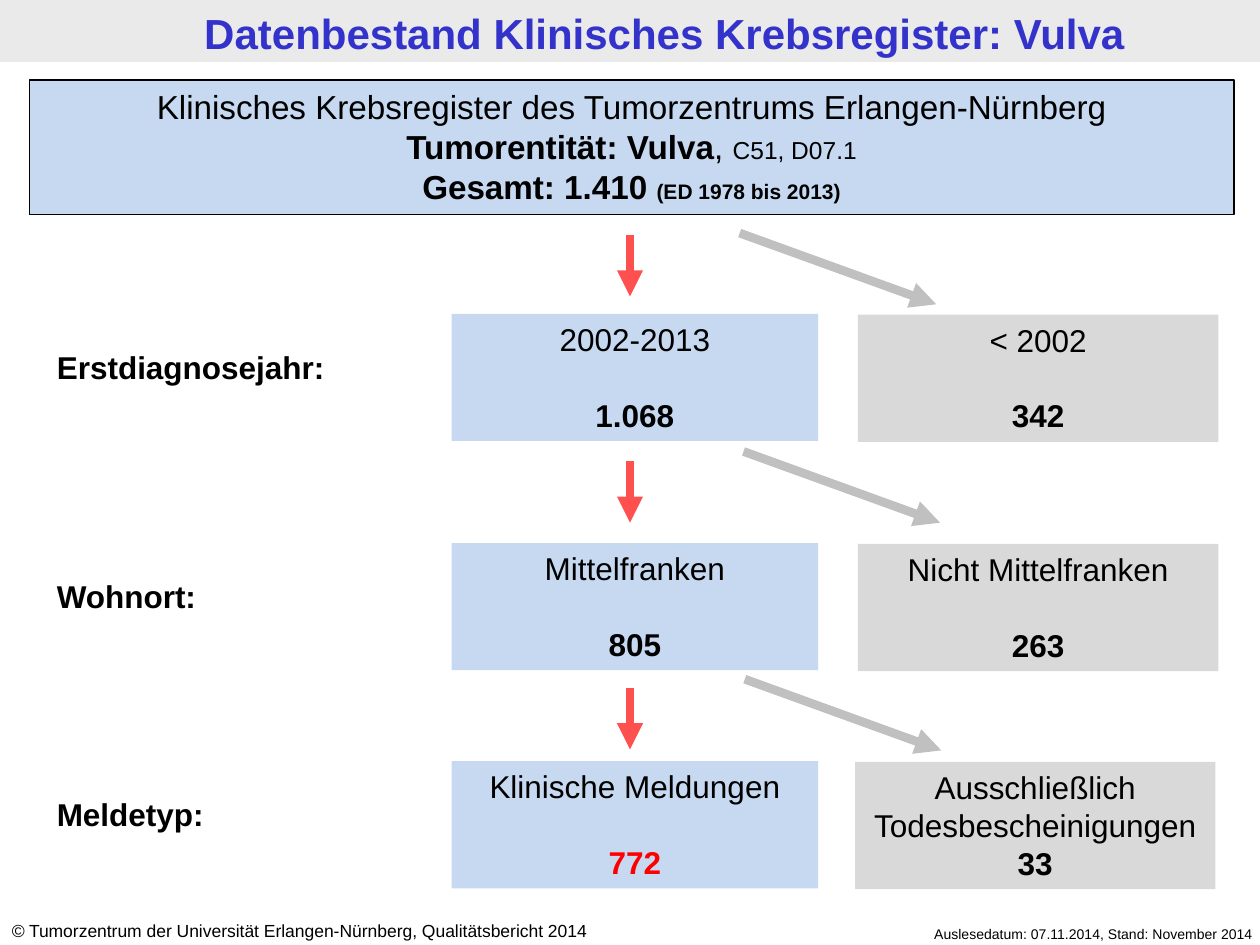
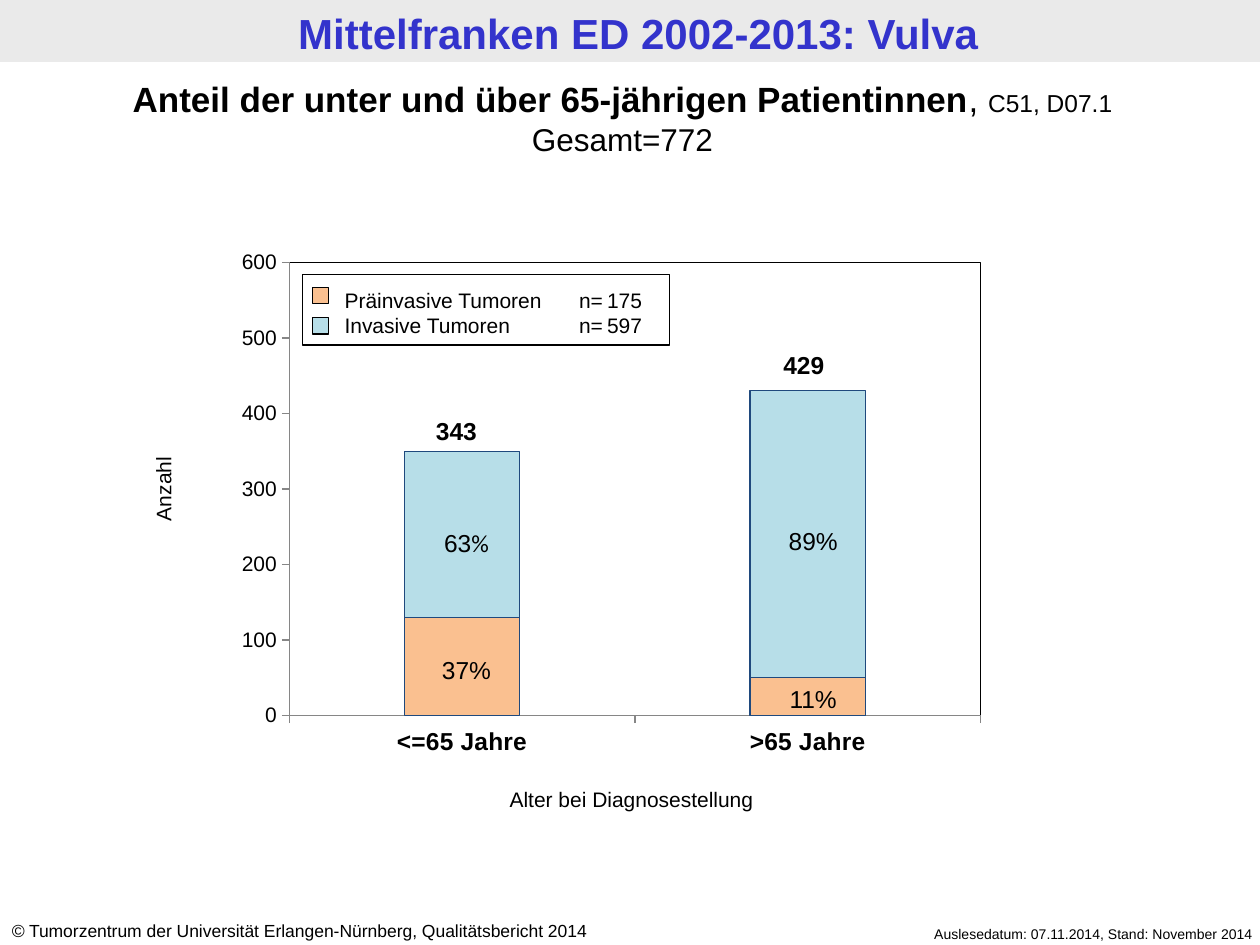
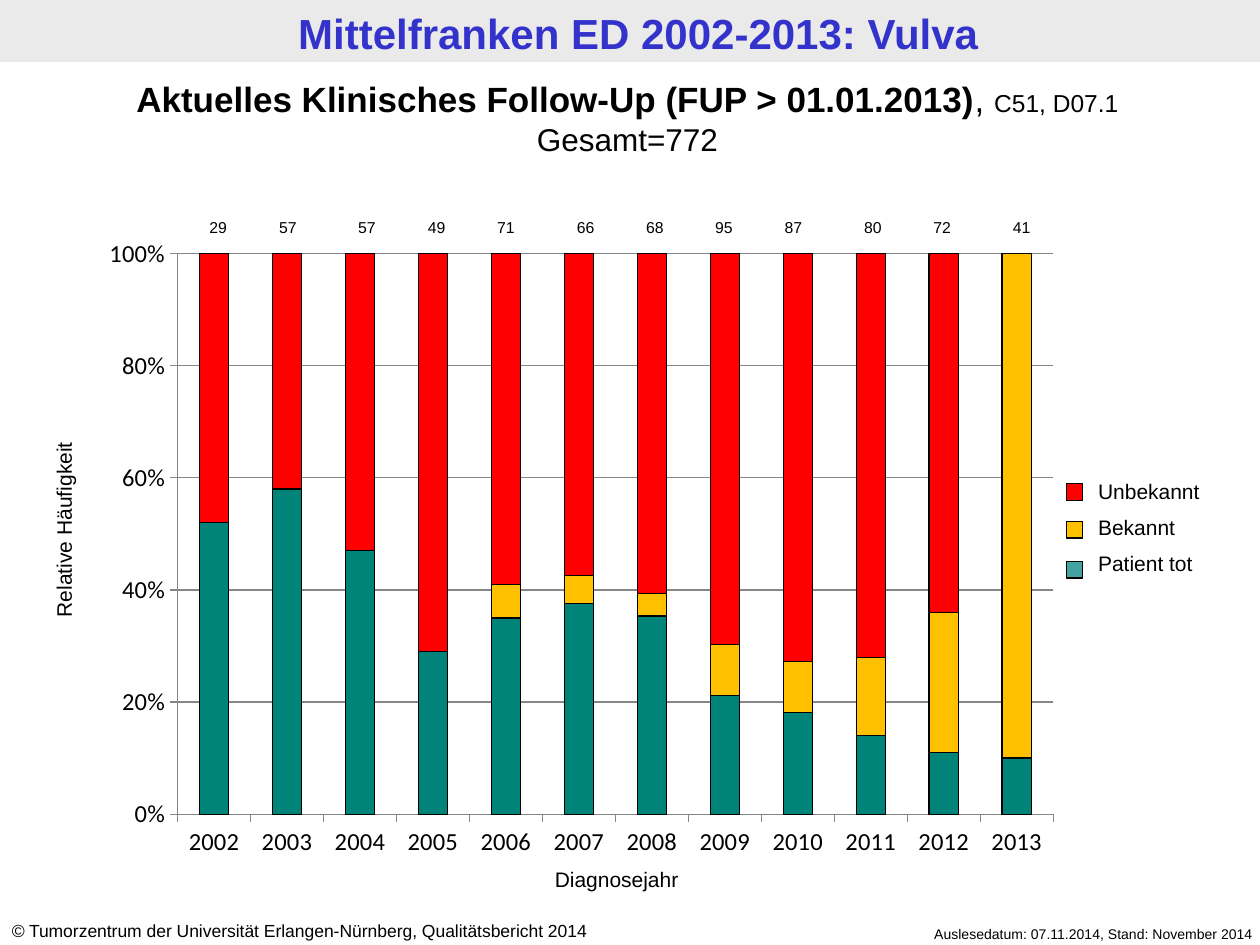
"""Build three slides on the vulva data of a clinical cancer registry."""
from lxml import etree
from pptx import Presentation
from pptx import util as u
from pptx.chart import data as chart_data
from pptx.dml.color import RGBColor
from pptx.enum import chart as chart_enum, shapes, text
from pptx.oxml import ns, parse_xml

Pt = u.Pt
BLACK = RGBColor(0, 0, 0)
BAND = RGBColor(0xEA, 0xEA, 0xEA)
TITLE = RGBColor(0x33, 0x33, 0xCC)
BLUE = RGBColor(0xC6, 0xD9, 0xF1)
GREY = RGBColor(0xD9, 0xD9, 0xD9)
RED = RGBColor(0xFF, 0, 0)
RED_ARROW = RGBColor(0xFF, 0x50, 0x50)
GREY_ARROW = RGBColor(0xC0, 0xC0, 0xC0)
AXIS = RGBColor(0x86, 0x86, 0x86)
NAVY = RGBColor(0x1F, 0x49, 0x7D)
ORANGE = RGBColor(0xFA, 0xC0, 0x90)
AQUA = RGBColor(0xB7, 0xDE, 0xE8)
TEAL = RGBColor(0, 0x83, 0x78)
TEAL_KEY = RGBColor(0, 0x83, 0x80)
AMBER = RGBColor(0xFF, 0xC0, 0)
LEFT, CENTER, RIGHT = text.PP_ALIGN.LEFT, text.PP_ALIGN.CENTER, text.PP_ALIGN.RIGHT

COPYRIGHT = [("©", {"italic": True}),
             " Tumorzentrum der Universität Erlangen-Nürnberg, Qualitätsbericht 2014"]
STAND = "Auslesedatum: 07.11.2014, Stand: November 2014"
CODES = ("C51, D07.1", {"size": 14})
COHORT_TITLE = "Mittelfranken ED 2002-2013: Vulva"

REGISTRY = ["Klinisches Krebsregister des Tumorzentrums Erlangen-Nürnberg",
            [("Tumorentität: Vulva", {"bold": True}), ", ", CODES],
            [("Gesamt: 1.410 ", {"bold": True}),
             ("(ED 1978 bis 2013)", {"size": 12, "bold": True})]]
STEPS = [
    {"label": "Erstdiagnosejahr:", "top": 179.3, "kept": ("2002-2013", "1.068", BLACK),
     "dropped": ("< 2002", "342", 21.6), "dropped_left": 490.3,
     "red_top": 134.4, "grey_start": (422.7, 133.2)},
    {"label": "Wohnort:", "top": 310.3, "kept": ("Mittelfranken", "805", BLACK),
     "dropped": ("Nicht Mittelfranken", "263", 21.6), "dropped_left": 490.3,
     "red_top": 263.7, "grey_start": (424.9, 258)},
    {"label": "Meldetyp:", "top": 434.9, "kept": ("Klinische Meldungen", "772", RED),
     "dropped": ("Ausschließlich Todesbescheinigungen", "33", 0), "dropped_left": 488.6,
     "red_top": 393.2, "grey_start": (425.6, 388.1)},
]

AGE_GROUPS = ["<=65 Jahre", ">65 Jahre"]
AGE_SERIES = [("Präinvasive Tumoren", [130, 50], ORANGE),
              ("Invasive Tumoren", [220, 380], AQUA)]
AGE_CASES = [175, 597]
AGE_LABELS = [
    (["63", ("%", {"font": "Calibri"})], 229.9, 298.1, 73.4, False),
    ("37%", 229.9, 370.8, 73.4, False),
    ("89%", 421.9, 296.9, 85.7, False),
    ("11%", 428, 387.4, 73.4, False),
    ("343", 224.1, 234.4, 73.4, True),
    ("429", 422.6, 196.6, 73.4, True),
]

YEARS = [str(year) for year in range(2002, 2014)]
FOLLOW_UP = [
    ("Patient tot", [52, 58, 47, 29, 35, 38, 35, 21, 18, 14, 11, 10], TEAL),
    ("Bekannt", [0, 0, 0, 0, 6, 5, 4, 9, 9, 14, 25, 90], AMBER),
    ("Unbekannt", [48, 42, 53, 71, 59, 58, 60, 69, 72, 72, 64, 0], RED),
]
YEAR_TOTALS = [(29, 104.9), (57, 144.7), (57, 189.9), (49, 229.7), (71, 269.3), (66, 314.8),
               (68, 354.4), (95, 393.9), (87, 433.6), (80, 479), (72, 518.6), (41, 564)]
FOLLOW_UP_KEYS = [(RED, 276.5, None), (AMBER, 298.1, None), (TEAL_KEY, 320.9, 74)]


def add_box(page, area, fill=None, line=None, alpha=None):
    box = page.shapes.add_shape(shapes.MSO_SHAPE.RECTANGLE, *map(Pt, area))
    box.shadow.inherit = False
    if fill is None:
        box.fill.background()
    else:
        box.fill.solid()
        box.fill.fore_color.rgb = fill
    if alpha:
        color = box.element.spPr.find(".//" + ns.qn("a:srgbClr"))
        etree.SubElement(color, ns.qn("a:alpha"), val=str(alpha * 1000))
    if line is None:
        box.line.fill.background()
    else:
        box.line.color.rgb = line
        box.line.width = Pt(0.75)
    return box


def put_text(page, paragraphs, area, *, size=18, bold=False, color=BLACK, align=LEFT,
             fill=None, line=None, gap=0, rotation=0, tabs=()):
    if fill is None:
        box = page.shapes.add_textbox(*map(Pt, area))
    else:
        box = add_box(page, area, fill, line)
    box.rotation = rotation
    frame = box.text_frame
    frame.word_wrap = True
    frame.vertical_anchor = text.MSO_ANCHOR.TOP
    for index, spans in enumerate(paragraphs):
        para = frame.add_paragraph() if index else frame.paragraphs[0]
        para.alignment = align
        if index and gap:
            para.space_before = Pt(gap)
        if tabs:
            stops = etree.SubElement(para._p.get_or_add_pPr(), ns.qn("a:tabLst"))
            for place, side in tabs:
                etree.SubElement(stops, ns.qn("a:tab"), pos=str(Pt(place)), algn=side)
        for span in [spans] if isinstance(spans, str) else spans:
            words, look = (span, {}) if isinstance(span, str) else span
            run = para.add_run()
            run.text = words
            run.font.name = look.get("font", "Arial")
            run.font.size = Pt(look.get("size", size))
            run.font.bold = look.get("bold", bold)
            run.font.italic = look.get("italic", False)
            run.font.color.rgb = look.get("color", color)
    return box


def add_arrow(page, start, end, color):
    arrow = page.shapes.add_connector(shapes.MSO_CONNECTOR.STRAIGHT, *map(Pt, start + end))
    arrow.line.color.rgb = color
    arrow.line.width = Pt(5)
    properties = arrow.element.spPr
    etree.SubElement(properties.find(ns.qn("a:ln")), ns.qn("a:tailEnd"), type="triangle")
    etree.SubElement(properties, ns.qn("a:effectLst"))


def add_page(deck, title, shift=0):
    page = deck.slides.add_slide(deck.slide_layouts[6])
    add_box(page, (0, 0, 720, 35.4), BAND)
    put_text(page, [title], (4.7 + shift, 0.5, 720, 35.3), size=24, bold=True,
             color=TITLE, align=CENTER)
    put_text(page, [STAND], (479.1, 525.2, 244, 17.3), size=8, align=RIGHT)
    put_text(page, [COPYRIGHT], (-0.4, 522.4, 377.3, 19.4), size=10)
    return page


def add_heading(page, topic, left, width):
    put_text(page, [[(topic, {"size": 20, "bold": True}), (", ", {"size": 20}), CODES],
                    "Gesamt=772"], (left, 41, width, 53.3), align=CENTER)


def add_columns(page, kind, area, categories, series, outline, gap, layout):
    values = chart_data.CategoryChartData()
    values.categories = categories
    for name, numbers, color in series:
        values.add_series(name, numbers)
    chart = page.shapes.add_chart(kind, *map(Pt, area), values).chart
    chart.has_legend = chart.has_title = False
    chart.font.name, chart.font.size = "Calibri", Pt(14)
    chart.font.color.rgb = BLACK
    plot = chart.plots[0]
    plot.gap_width, plot.overlap, plot.vary_by_categories = gap, 100, False
    for column, (name, numbers, color) in zip(plot.series, series):
        column.format.fill.solid()
        column.format.fill.fore_color.rgb = color
        column.format.line.color.rgb = outline
        column.format.line.width = Pt(0.75)
    for axis in (chart.category_axis, chart.value_axis):
        axis.major_tick_mark = chart_enum.XL_TICK_MARK.OUTSIDE
        axis.minor_tick_mark = chart_enum.XL_TICK_MARK.NONE
        axis.format.line.color.rgb = AXIS
        axis.format.line.width = Pt(0.75)
    chart.value_axis.minimum_scale = 0
    plot_area = chart.element.find(".//" + ns.qn("c:plotArea"))
    for old in plot_area.findall(ns.qn("c:layout")):
        plot_area.remove(old)
    sizes = "".join(f'<c:{tag} val="{share}"/>' for tag, share in zip("xywh", layout))
    plot_area.insert(0, parse_xml(
        f'<c:layout {ns.nsdecls("c")}><c:manualLayout><c:layoutTarget val="inner"/>'
        f'<c:xMode val="edge"/><c:yMode val="edge"/>{sizes}</c:manualLayout></c:layout>'))
    return chart


def build_flow(deck):
    page = add_page(deck, "Datenbestand Klinisches Krebsregister: Vulva", 15)
    put_text(page, REGISTRY, (16.8, 45.7, 688.3, 77), size=19, align=CENTER,
             fill=BLUE, line=BLACK)
    for step in STEPS:
        top = step["top"]
        put_text(page, [step["label"]], (25.4, top + 16, 198.7, 28.8), bold=True)
        name, count, color = step["kept"]
        put_text(page, [name, [(count, {"bold": True, "color": color})]],
                 (258, top, 209.5, 72.7), align=CENTER, fill=BLUE, gap=21.6)
        name, count, gap = step["dropped"]
        put_text(page, [name, [(count, {"bold": True})]],
                 (step["dropped_left"], top + 0.5, 205.9, 72.7), align=CENTER,
                 fill=GREY, gap=gap)
        add_arrow(page, (360, step["red_top"]), (360, step["red_top"] + 35), RED_ARROW)
        x, y = step["grey_start"]
        add_arrow(page, (x, y), (x + 112.3, y + 40.7), GREY_ARROW)


def build_age(deck):
    page = add_page(deck, COHORT_TITLE)
    chart = add_columns(page, chart_enum.XL_CHART_TYPE.COLUMN_STACKED,
                        (108.5, 102.3, 502.6, 335.5), AGE_GROUPS, AGE_SERIES, NAVY, 200,
                        (0.113, 0.142, 0.786, 0.772))
    chart.value_axis.has_major_gridlines = False
    chart.value_axis.maximum_scale, chart.value_axis.major_unit = 600, 100
    for axis, size, bold in ((chart.category_axis, 14, True), (chart.value_axis, 12, False)):
        font = axis.tick_labels.font
        font.name, font.size, font.bold = "Arial", Pt(size), bold
    plot_area = chart.element.find(".//" + ns.qn("c:plotArea"))
    plot_area.append(parse_xml(
        f'<c:spPr {ns.nsdecls("c", "a")}><a:noFill/><a:ln w="{Pt(0.75)}"><a:solidFill>'
        f'<a:srgbClr val="{BLACK}"/></a:solidFill></a:ln></c:spPr>'))
    add_heading(page, "Anteil der unter und über 65-jährigen Patientinnen", 0, 711.4)
    for label, left, top, width, bold in AGE_LABELS:
        put_text(page, [label], (left, top, width, 24.5), size=14, bold=bold, align=CENTER)
    put_text(page, ["Alter bei Diagnosestellung"], (241, 445.7, 239.8, 21.6),
             size=12, align=CENTER)
    put_text(page, ["Anzahl"], (-0.7, 268.6, 187.9, 21.6), size=12, align=CENTER, rotation=270)
    add_box(page, (172.9, 156.8, 209.5, 40.3), line=BLACK)
    entries = [f"{name}\tn=\t{cases}" for (name, *rest), cases in zip(AGE_SERIES, AGE_CASES)]
    put_text(page, entries, (189.8, 160.6, 193, 36), size=12, tabs=[(134, "l"), (170, "r")])
    for index, (name, numbers, color) in enumerate(AGE_SERIES):
        add_box(page, (178.5, 164.2 + 17.3 * index, 9.4, 9.4), color, BLACK)


def build_follow_up(deck):
    page = add_page(deck, COHORT_TITLE)
    chart = add_columns(page, chart_enum.XL_CHART_TYPE.COLUMN_STACKED_100,
                        (51.5, 129.1, 561.6, 367.9), YEARS, FOLLOW_UP, BLACK, 150,
                        (0.089, 0.043, 0.891, 0.871))
    axis = chart.value_axis
    axis.major_unit = 0.2
    axis.major_gridlines.format.line.color.rgb = AXIS
    axis.major_gridlines.format.line.width = Pt(0.75)
    axis.tick_labels.number_format = "0%"
    axis.tick_labels.number_format_is_linked = False
    put_text(page, ["Relative Häufigkeit"], (-50, 291.6, 173.5, 22.3), size=12,
             align=CENTER, rotation=270)
    put_text(page, ["Diagnosejahr"], (271.4, 491.4, 162, 22.3), size=12, align=CENTER)
    add_heading(page, "Aktuelles Klinisches Follow-Up (FUP > 01.01.2013)", -2.9, 722.9)
    for total, left in YEAR_TOTALS:
        put_text(page, [str(total)], (left, 121.1, 39.6, 18), size=9, align=CENTER)
    put_text(page, [name for name, numbers, color in reversed(FOLLOW_UP)],
             (620.4, 270, 102.2, 65.5), size=12, gap=6.1)
    for color, top, alpha in FOLLOW_UP_KEYS:
        add_box(page, (609.3, top, 9.4, 9.4), color, BLACK, alpha)


def main():
    deck = Presentation()
    deck.slide_width, deck.slide_height = Pt(720), Pt(540)
    build_flow(deck)
    build_age(deck)
    build_follow_up(deck)
    deck.save("out.pptx")


if __name__ == "__main__":
    main()
